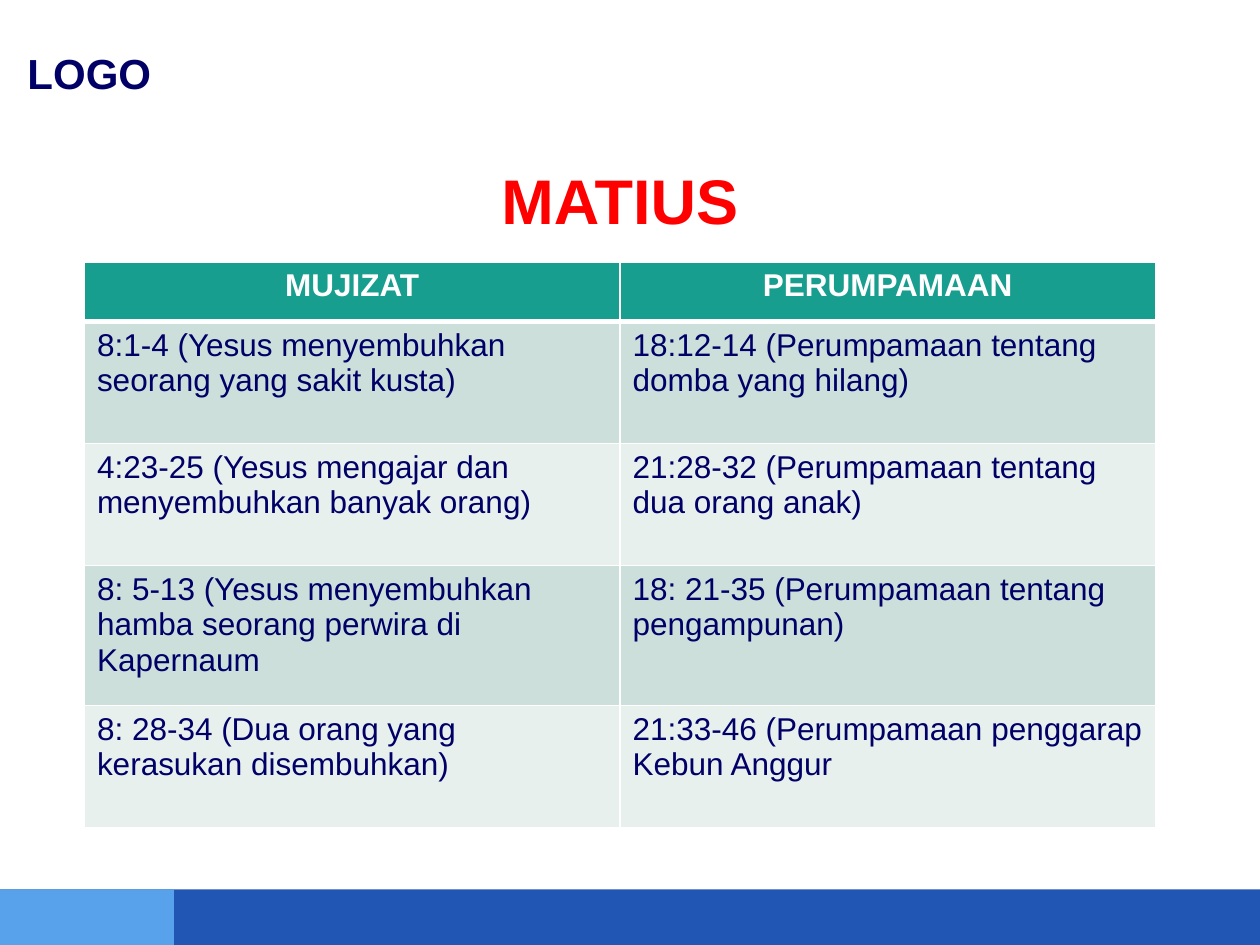
from lxml import etree
from pptx import Presentation
from pptx.dml.color import RGBColor
from pptx.enum.shapes import MSO_SHAPE
from pptx.enum.text import MSO_ANCHOR, PP_ALIGN
from pptx.oxml.ns import qn
from pptx.util import Inches, Pt

RECTANGLE = MSO_SHAPE.RECTANGLE
MIDDLE = MSO_ANCHOR.MIDDLE
LEFT, CENTER = PP_ALIGN.LEFT, PP_ALIGN.CENTER

WIDTH, HEIGHT = 10, 7.5
TITLE_ONLY = 5
FOOTER_HEIGHT = 0.44
COLUMN_WIDTH = 4.25
ROW_HEIGHTS = [0.47, 0.97, 0.97, 1.11, 0.97]
NAVY, WHITE, RED = "000066", "FFFFFF", "FF0000"
HEADER_FILL = "189E8E"
BAND_FILLS = ["CCDFDB", "E8F0EE"]
LOGO_FONT = {"name": "Arial", "size": Pt(24), "bold": True}
TITLE_FONT = {"name": "Arial", "size": Pt(36), "bold": True}
HEADER_FONT = {"name": "Arial", "size": Pt(18), "bold": True}
BODY_FONT = {"name": "Arial", "size": Pt(18), "bold": False}

ROWS = [
    ("MUJIZAT", "PERUMPAMAAN"),
    ("8:1-4 (Yesus menyembuhkan seorang yang sakit kusta)",
     "18:12-14 (Perumpamaan tentang domba yang hilang)"),
    ("4:23-25 (Yesus mengajar dan menyembuhkan banyak orang)",
     "21:28-32 (Perumpamaan tentang dua orang anak)"),
    ("8: 5-13 (Yesus menyembuhkan hamba seorang perwira di Kapernaum",
     "18: 21-35 (Perumpamaan tentang pengampunan)"),
    ("8: 28-34 (Dua orang yang kerasukan disembuhkan)",
     "21:33-46 (Perumpamaan penggarap Kebun Anggur"),
]


def color(hex_value):
    return RGBColor.from_string(hex_value)


def box(left, top, width, height):
    return [Inches(length) for length in (left, top, width, height)]


def write(text_frame, text, font_format, hex_value, alignment=LEFT):
    text_frame.text = text
    text_frame.word_wrap = True
    paragraph = text_frame.paragraphs[0]
    paragraph.alignment = alignment
    for name, value in font_format.items():
        setattr(paragraph.font, name, value)
    paragraph.font.color.rgb = color(hex_value)


def add_bar(slide, width_share, hex_value):
    shape = slide.shapes.add_shape(
        RECTANGLE, *box(0, HEIGHT - FOOTER_HEIGHT, WIDTH * width_share, FOOTER_HEIGHT))
    shape.shadow.inherit = False
    shape.fill.solid()
    shape.fill.fore_color.rgb = color(hex_value)
    shape.line.fill.background()


def add_logo_text(slide):
    shape = slide.shapes.add_textbox(*box(0.12, 0.33, 1.33, 0.5))
    write(shape.text_frame, "LOGO", LOGO_FONT, NAVY)


def set_title(slide):
    title = slide.shapes.title
    title.left, title.top, title.width, title.height = box(1.08, 1.25, 7.68, 0.67)
    write(title.text_frame, "MATIUS", TITLE_FONT, RED, CENTER)
    title.text_frame.vertical_anchor = MIDDLE


def set_borders(cell, widths):
    properties = cell._tc.get_or_add_tcPr()
    for index, (side, width) in enumerate(widths.items()):
        line = etree.Element(qn(f"a:ln{side}"), w=str(Pt(width)))
        fill = etree.SubElement(line, qn("a:solidFill"))
        etree.SubElement(fill, qn("a:srgbClr"), val=WHITE)
        properties.insert(index, line)


def format_cell(cell, text, row):
    is_header = row == 0
    if is_header:
        write(cell.text_frame, text, HEADER_FONT, WHITE, CENTER)
    else:
        write(cell.text_frame, text, BODY_FONT, NAVY)
    cell.fill.solid()
    cell.fill.fore_color.rgb = color(HEADER_FILL if is_header else BAND_FILLS[(row - 1) % 2])
    set_borders(cell, {"L": 1, "R": 1, "T": 3 if row == 1 else 1, "B": 3 if is_header else 1})


def add_verse_table(slide):
    column_count = len(ROWS[0])
    frame = slide.shapes.add_table(
        len(ROWS), column_count,
        *box(0.67, 2.08, COLUMN_WIDTH * column_count, sum(ROW_HEIGHTS)))
    table = frame.table
    for column in table.columns:
        column.width = Inches(COLUMN_WIDTH)
    for row, (texts, height) in enumerate(zip(ROWS, ROW_HEIGHTS)):
        table.rows[row].height = Inches(height)
        for column, text in enumerate(texts):
            format_cell(table.cell(row, column), text, row)


def main():
    presentation = Presentation()
    presentation.slide_width = Inches(WIDTH)
    presentation.slide_height = Inches(HEIGHT)
    slide = presentation.slides.add_slide(presentation.slide_layouts[TITLE_ONLY])
    add_bar(slide, 1, "2256B4")
    add_bar(slide, 0.138, "58A2EC")
    add_logo_text(slide)
    set_title(slide)
    add_verse_table(slide)
    presentation.save("out.pptx")


if __name__ == "__main__":
    main()
